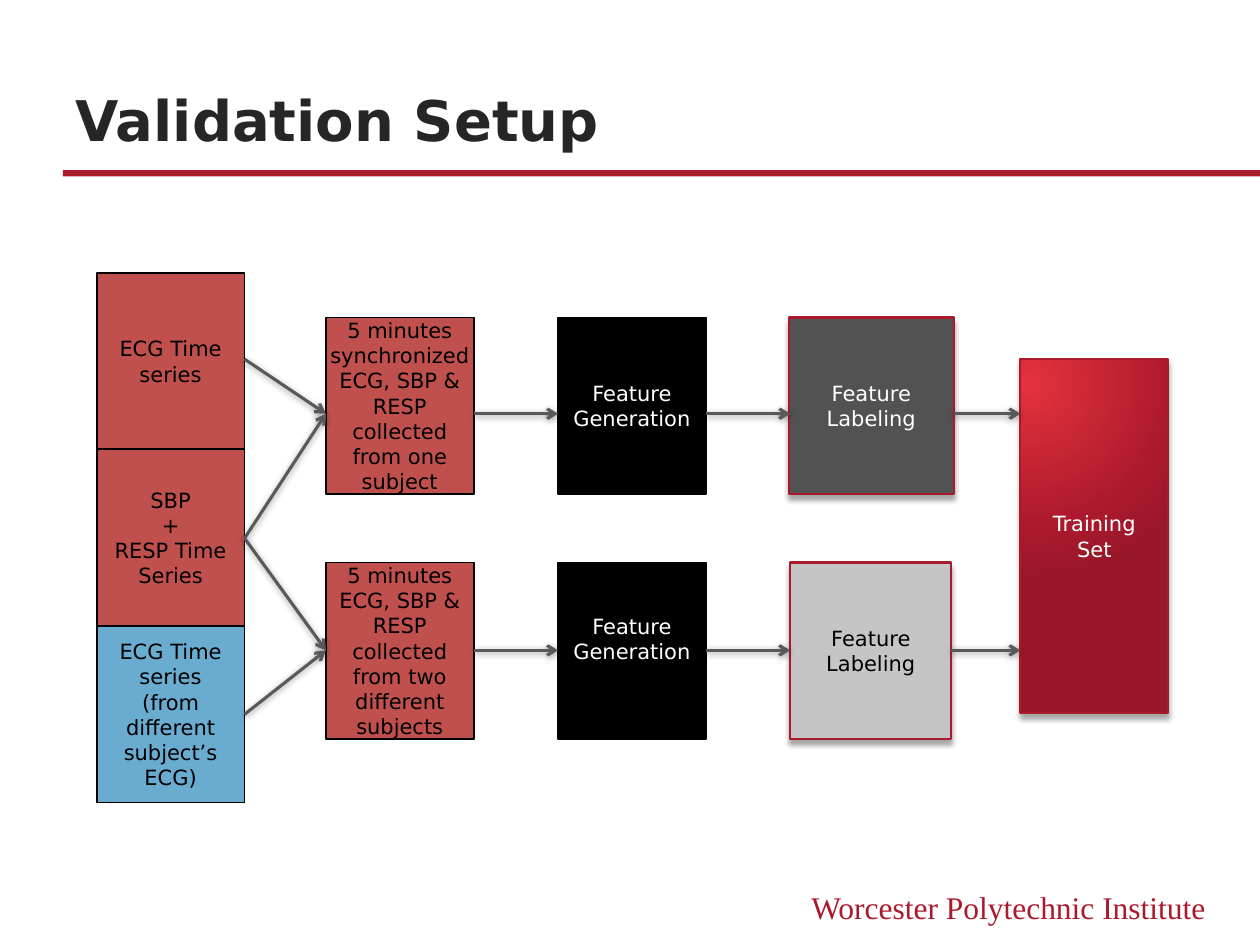
from lxml import etree
from pptx import Presentation
from pptx.dml.color import RGBColor
from pptx.enum.shapes import MSO_CONNECTOR, MSO_SHAPE
from pptx.enum.text import MSO_ANCHOR, PP_ALIGN
from pptx.oxml import parse_xml
from pptx.oxml.ns import qn
from pptx.util import Cm, Pt

RECT, LINE = MSO_SHAPE.RECTANGLE, MSO_CONNECTOR.STRAIGHT
MID, LOW = MSO_ANCHOR.MIDDLE, MSO_ANCHOR.BOTTOM
LEFT, RIGHT, CENTER = PP_ALIGN.LEFT, PP_ALIGN.RIGHT, PP_ALIGN.CENTER
SANS, SERIF = "DejaVu Sans", "Times New Roman"
BLACK, WHITE, CRIMSON, BRICK = "000000", "FFFFFF", "AB192D", "C0504D"
BLUE, DARK, PALE, GREY, INK = "6AACD0", "525252", "C5C5C5", "595959", "262626"

# Content: series stacked on the left, two rows of steps, one result
SERIES = [
    (["ECG Time series"], BRICK),
    (["SBP", "+", "RESP Time Series"], BRICK),
    (["ECG Time series", "(from different subject’s ECG)"], BLUE),
]
ROWS = [
    dict(top=6.4, data="5 minutes synchronized ECG, SBP & RESP collected from one subject",
         label=(15.9, 3.33), fill=DARK, ink=WHITE, foot=0),
    dict(top=11.34, data="5 minutes ECG, SBP & RESP collected from two different subjects",
         label=(15.93, 3.25), fill=PALE, ink=BLACK, foot=0.49),
]
WIDE, HIGH = 2.98, 3.56
X_SER, X_DATA, X_GEN, X_SET = 1.95, 6.57, 11.25, 20.57
Y_SER, Y_SET, H_SET = 5.5, 7.24, 7.14
FLOW = [8.34, 13.11]                 # heights of the two rows of arrows
EXITS = [7.24, 10.85, 14.4]          # where arrows leave the series
FEEDS = [(0, 0), (1, 0), (1, 1), (2, 1)]
BOX_SHADE, LINE_SHADE = (35, 3, 3, 90), (40, 4, 1, 88)
NS = 'xmlns:a="http://schemas.openxmlformats.org/drawingml/2006/main"'


def color(hex):
    return RGBColor.from_string(hex)


def shade(item, alpha, blur, dist, turn):
    props = item._element.spPr
    list_ = props.find(qn("a:effectLst"))
    if list_ is None:
        list_ = etree.SubElement(props, qn("a:effectLst"))
    list_.append(parse_xml(
        f'<a:outerShdw {NS} blurRad="{Pt(blur)}" dist="{Pt(dist)}" dir="{turn * 60000}" '
        f'rotWithShape="0"><a:srgbClr val="000000"><a:alpha val="{alpha * 1000}"/>'
        '</a:srgbClr></a:outerShdw>'))


def write(frame, lines, ink, size=12, face=SANS, align=CENTER, anchor=MID, bold=False):
    frame.word_wrap, frame.vertical_anchor = True, anchor
    for i, line in enumerate(lines):
        para = frame.paragraphs[0] if i == 0 else frame.add_paragraph()
        para.text, para.alignment = line, align
        form = dict(size=Pt(size), name=face, bold=bold)
        for key, value in form.items():
            setattr(para.font, key, value)
        para.font.color.rgb = color(ink)


def block(x, y, w, h, fill, edge=None, width=1):
    shape = slide.shapes.add_shape(RECT, Cm(x), Cm(y), Cm(w), Cm(h))
    shape.shadow.inherit = False
    if fill:
        shape.fill.solid()
        shape.fill.fore_color.rgb = color(fill)
    if edge:
        shape.line.color.rgb = color(edge)
        shape.line.width = Pt(width)
    else:
        shape.line.fill.background()
    return shape


def plain(x, y, lines, fill, ink, foot=0):
    shape = block(x, y, WIDE, HIGH, fill, BLACK)
    frame = shape.text_frame
    for side, gap in dict(left=0, top=0, right=0, bottom=foot).items():
        setattr(frame, "margin_" + side, Cm(gap))
    write(frame, lines, ink)


def raised(x, y, w, h, text, fill, ink):
    shape = block(x, y, w, h, fill, CRIMSON, 1.25)
    shade(shape, *BOX_SHADE)
    write(shape.text_frame, [text], ink)
    return shape


def arrow(x1, y1, x2, y2):
    link = slide.shapes.add_connector(LINE, Cm(x1), Cm(y1), Cm(x2), Cm(y2))
    link.line.color.rgb = color(GREY)
    link.line.width = Pt(1.75)
    etree.SubElement(link.line._get_or_add_ln(), qn("a:tailEnd"), type="arrow")
    shade(link, *LINE_SHADE)


deck = Presentation()
deck.slide_width, deck.slide_height = Cm(25.4), Cm(19.05)
slide = deck.slides.add_slide(deck.slide_layouts[5])

# Title, rule and footer
title = slide.shapes.title
title.left, title.top, title.width, title.height = Cm(1.27), Cm(0.97), Cm(22.86), Cm(2.24)
write(title.text_frame, ["Validation Setup"], INK, 32, align=LEFT, anchor=LOW, bold=True)
block(1.27, 3.43, 24.13, 0.13, CRIMSON)
foot = slide.shapes.add_textbox(Cm(15.24), Cm(17.78), Cm(9.32), Cm(1.02))
write(foot.text_frame, ["Worcester Polytechnic Institute"], CRIMSON, 18, SERIF, RIGHT, MSO_ANCHOR.TOP)

# Series
for i, (lines, fill) in enumerate(SERIES):
    plain(X_SER, Y_SER + i * HIGH, lines, fill, BLACK)

# Steps of each row
for row in ROWS:
    top, (left, wide) = row["top"], row["label"]
    plain(X_DATA, top, [row["data"]], BRICK, BLACK)
    plain(X_GEN, top, ["Feature Generation"], BLACK, WHITE, row["foot"])
    raised(left, top, wide, HIGH, "Feature Labeling", row["fill"], row["ink"])

# Result, with a glow from its upper left
result = raised(X_SET, Y_SET, WIDE, H_SET, "Training Set", None, WHITE)
stops = "".join(f'<a:gs pos="{at * 1000}"><a:srgbClr val="{tint}"/></a:gs>'
                for at, tint in [(0, "E3323B"), (76, CRIMSON), (100, "9A1729")])
result._element.spPr.insert(2, parse_xml(
    f'<a:gradFill {NS} rotWithShape="1"><a:gsLst>{stops}</a:gsLst><a:path path="circle">'
    '<a:fillToRect l="15000" t="15000" r="100000" b="100000"/></a:path></a:gradFill>'))

# Arrows
for start, end in FEEDS:
    arrow(X_SER + WIDE, EXITS[start], X_DATA, FLOW[end])
for row, y in zip(ROWS, FLOW):
    left, wide = row["label"]
    for x1, x2 in [(X_DATA + WIDE, X_GEN), (X_GEN + WIDE, 15.93), (left + wide, X_SET)]:
        arrow(x1, y, x2, y)

deck.save("out.pptx")
